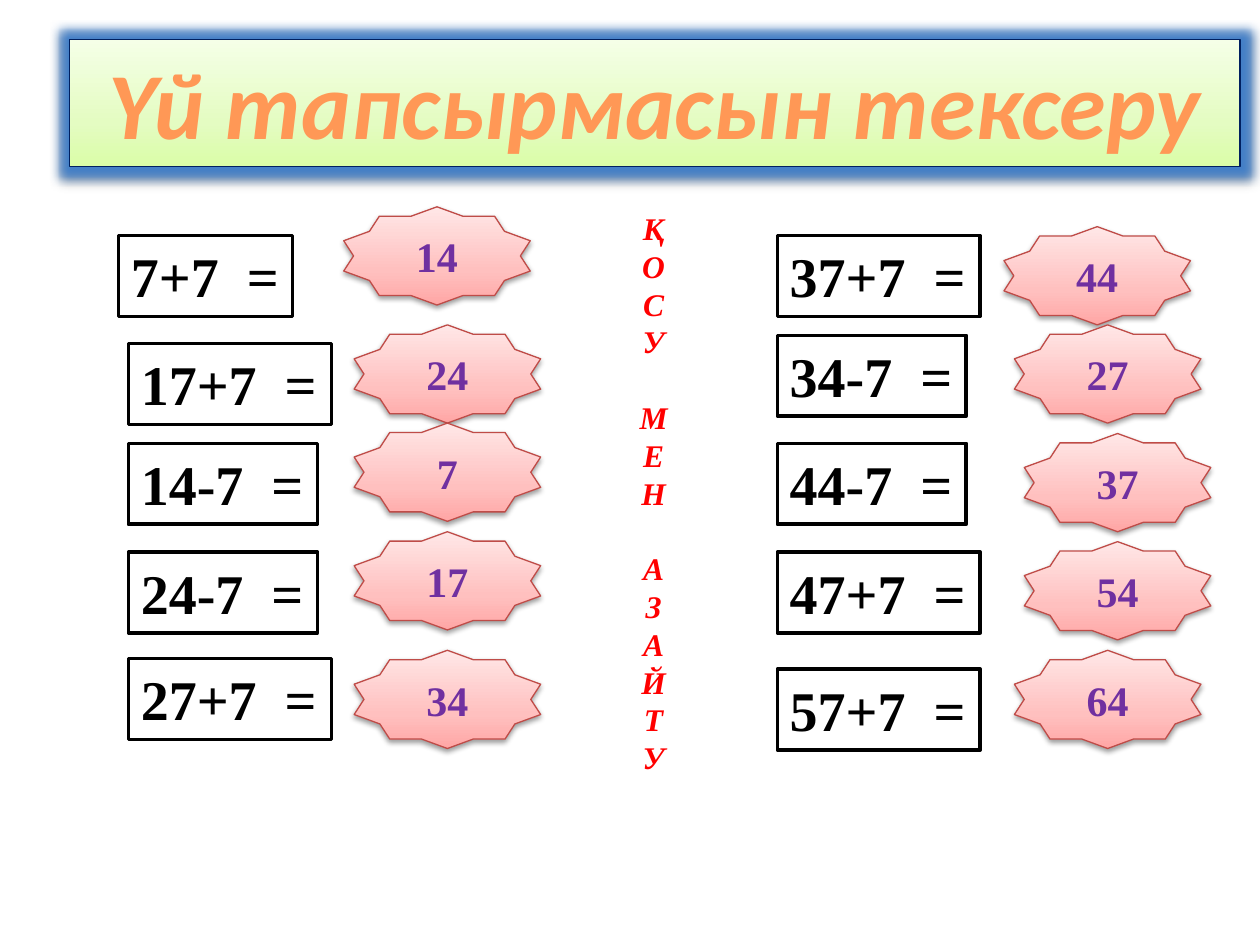
from lxml import etree
from pptx import Presentation
from pptx import util as u
from pptx.dml.color import RGBColor
from pptx.enum import shapes, text
from pptx.oxml import parse_xml
from pptx.oxml.ns import nsdecls, qn

SERIF = "Times New Roman"
GREEN = [(0, "DAFDA7"), (35, "E4FCC2"), (100, "F5FFE7")]
PINK = [(0, "FFA6A5"), (35, "FFC0BF"), (100, "FFE7E7")]
GLOW = ('<a:glow rad="139700"><a:srgbClr val="3A7CCB">'
        '<a:alpha val="90000"/></a:srgbClr></a:glow>')

# equation, width, (dx, dy), answer, (dx, dy); cm from the column's corner
LEFT = [
    ("7+7  =", 3.51, (0, 0.58), "14", (4.54, 0)),
    ("17+7  =", 4.09, (0.2, 2.76), "24", (4.75, 2.38)),
    ("14-7  =", 3.81, (0.2, 4.77), "7", (4.75, 4.36)),
    ("24-7  =", 3.81, (0.2, 6.96), "17", (4.75, 6.55)),
    ("27+7  =", 4.09, (0.2, 9.11), "34", (4.75, 8.94)),
]
RIGHT = [
    ("37+7  =", 4.09, (0, 0.58), "44", (4.57, 0.4)),
    ("34-7  =", 3.81, (0, 2.59), "27", (4.78, 2.38)),
    ("44-7  =", 3.81, (0, 4.77), "37", (4.98, 4.57)),
    ("47+7  =", 4.09, (0, 6.96), "54", (4.98, 6.75)),
    ("57+7  =", 4.09, (0, 9.32), "64", (4.78, 8.94)),
]


def rgb(value):
    return RGBColor.from_string(value)


def cm(*lengths):
    return [u.Cm(n) for n in lengths]


def soft_style(sp, stops, line, glow=""):
    """Upward gradient, thin outline and a drop shadow."""
    gs = "".join(f'<a:gs pos="{pos * 1000}"><a:srgbClr val="{c}"/></a:gs>'
                 for pos, c in stops)
    pr = sp.element.spPr
    pr.append(parse_xml(
        f'<a:gradFill {nsdecls("a")} rotWithShape="1"><a:gsLst>{gs}</a:gsLst>'
        '<a:lin ang="16200000" scaled="0"/></a:gradFill>'))
    sp.line.color.rgb = rgb(line)
    sp.line.width = u.Pt(0.75)
    pr.append(parse_xml(
        f'<a:effectLst {nsdecls("a")}>{glow}<a:outerShdw blurRad="40000" '
        'dist="20000" dir="5400000" rotWithShape="0"><a:srgbClr val="000000">'
        '<a:alpha val="38000"/></a:srgbClr></a:outerShdw></a:effectLst>'))


def write(tf, words, size, color, align, font=SERIF, italic=False):
    p = tf.paragraphs[0]
    p.text = words
    p.alignment = align
    p.font.name = font
    p.font.size = u.Pt(size)
    p.font.bold = True
    p.font.italic = italic
    p.font.color.rgb = rgb(color)


def add_title(slide, x, y, w, h):
    sp = slide.shapes.title
    sp.left, sp.top, sp.width, sp.height = cm(x, y, w, h)
    soft_style(sp, GREEN, "002060", GLOW)
    tf = sp.text_frame
    tf.auto_size = text.MSO_AUTO_SIZE.SHAPE_TO_FIT_TEXT
    tf.vertical_anchor = text.MSO_ANCHOR.TOP
    write(tf, "Үй тапсырмасын тексеру", 54, "FF9856", text.PP_ALIGN.CENTER,
          "Calibri", True)


def add_equation(slide, words, x, y, w, h=1.63):
    sp = slide.shapes.add_shape(shapes.MSO_SHAPE.RECTANGLE, *cm(x, y, w, h))
    sp.shadow.inherit = False
    sp.fill.solid()
    sp.fill.fore_color.rgb = rgb("FFFFFF")
    sp.line.color.rgb = rgb("000000")
    sp.line.width = u.Pt(2)
    tf = sp.text_frame
    tf.word_wrap = False
    tf.auto_size = text.MSO_AUTO_SIZE.SHAPE_TO_FIT_TEXT
    tf.vertical_anchor = text.MSO_ANCHOR.TOP
    write(tf, words, 32, "000000", text.PP_ALIGN.LEFT)


def add_answer(slide, words, x, y, w=3.76, h=1.98):
    sp = slide.shapes.add_shape(shapes.MSO_SHAPE.STAR_10_POINT, *cm(x, y, w, h))
    soft_style(sp, PINK, "BF4C48")
    sp.text_frame.vertical_anchor = text.MSO_ANCHOR.MIDDLE
    write(sp.text_frame, words, 24, "7030A0", text.PP_ALIGN.CENTER)


def add_column(slide, x, y, rows):
    for equation, width, (ex, ey), answer, (ax, ay) in rows:
        add_equation(slide, equation, x + ex, y + ey, width)
        add_answer(slide, answer, x + ax, y + ay)


def add_stacked_label(slide, x, y, w, h):
    tf = slide.shapes.add_textbox(*cm(x, y, w, h)).text_frame
    tf.word_wrap = True
    tf.auto_size = text.MSO_AUTO_SIZE.SHAPE_TO_FIT_TEXT
    write(tf, "ҚОСУ МЕН АЗАЙТУ ", 18, "FF0000", text.PP_ALIGN.CENTER,
          italic=True)
    tf._txBody.find(qn("a:bodyPr")).set("vert", "wordArtVert")


def main():
    prs = Presentation()
    prs.slide_width, prs.slide_height = cm(25.4, 19.05)
    slide = prs.slides.add_slide(prs.slide_layouts[5])
    add_title(slide, 1.4, 0.79, 23.6, 2.57)
    add_column(slide, 2.39, 4.17, LEFT)
    add_column(slide, 15.67, 4.17, RIGHT)
    add_stacked_label(slide, 12.5, 3.96, 1.35, 12.7)
    prs.save("out.pptx")


if __name__ == "__main__":
    main()
